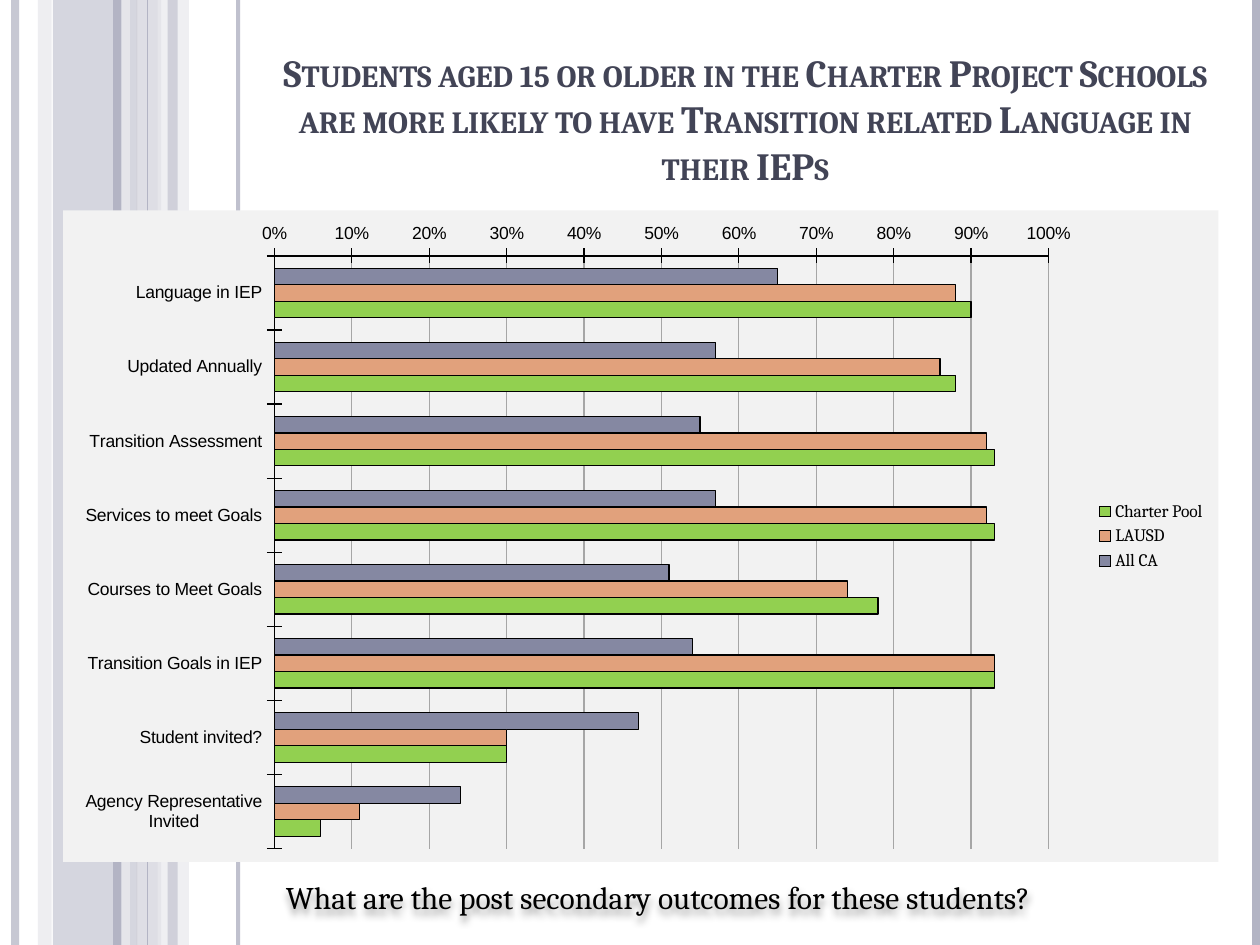
from typing import NamedTuple

from lxml.etree import SubElement
from pptx import Presentation
from pptx.chart.data import CategoryChartData
from pptx.dml.color import RGBColor
from pptx.enum.chart import XL_CHART_TYPE, XL_LEGEND_POSITION, XL_TICK_MARK
from pptx.enum.shapes import MSO_CONNECTOR, MSO_SHAPE
from pptx.enum.text import MSO_ANCHOR, MSO_AUTO_SIZE, PP_ALIGN
from pptx.oxml import parse_xml
from pptx.oxml.ns import nsdecls, qn
from pptx.util import Inches, Pt

COLORS = {
    "stripe": "B3B4C4", "pale": "D1D1DA", "faint": "E9E9ED",
    "title": "424456", "black": "000000", "panel": "F2F2F2", "grid": "A6A6A6",
    "All CA": "8588A2", "LAUSD": "E1A17C", "Charter Pool": "92D050",
}
HEIGHT = 7.5


class Band(NamedTuple):
    left: float
    width: float
    color: str
    alpha: int


class Stripe(NamedTuple):
    x: float
    weight: float
    color: str
    alpha: int = 100


BANDS = [
    Band(0.42, 0.67, "stripe", 54),
    Band(0.3, 0.11, "pale", 36),
    Band(1.08, 0.2, "pale", 70),
    Band(1.25, 0.25, "faint", 71),
]
STRIPES = [
    Stripe(0.12, 4.5, "stripe", 73),
    Stripe(1, 4.5, "faint", 83),
    Stripe(0.93, 4.5, "stripe"),
    Stripe(1.89, 2.25, "stripe", 82),
    Stripe(1.17, 0.75, "stripe"),
    Stripe(9.97, 4.5, "stripe"),
]
FRONT_BAND = Band(1.33, 0.08, "stripe", 51)

CATEGORIES = [
    "Language in IEP", "Updated Annually", "Transition Assessment",
    "Services to meet Goals", "Courses to Meet Goals",
    "Transition Goals in IEP", "Student invited?",
    "Agency Representative Invited",
]
SERIES = {
    "All CA": [0.65, 0.57, 0.55, 0.57, 0.51, 0.54, 0.47, 0.24],
    "LAUSD": [0.88, 0.86, 0.92, 0.92, 0.74, 0.93, 0.3, 0.11],
    "Charter Pool": [0.9, 0.88, 0.93, 0.93, 0.78, 0.93, 0.3, 0.06],
}


def rgb(name: str) -> RGBColor:
    return RGBColor.from_string(COLORS[name])


def set_alpha(element, percent: int) -> None:
    if percent < 100:
        clr = next(element.iter(qn("a:srgbClr")))
        SubElement(clr, qn("a:alpha"), val=str(percent * 1000))


def set_line(line, color: str, weight: float = 0.75) -> None:
    line.color.rgb = rgb(color)
    line.width = Pt(weight)


def draw_band(s, band: Band) -> None:
    sp = s.shapes.add_shape(MSO_SHAPE.RECTANGLE, Inches(band.left), 0,
                            Inches(band.width), Inches(HEIGHT))
    sp.shadow.inherit = False
    sp.fill.solid()
    sp.fill.fore_color.rgb = rgb(band.color)
    sp.line.fill.background()
    set_alpha(sp.element.spPr, band.alpha)


def draw_stripe(s, stripe: Stripe) -> None:
    x = Inches(stripe.x)
    cx = s.shapes.add_connector(MSO_CONNECTOR.STRAIGHT, x, 0, x, Inches(HEIGHT))
    set_line(cx.line, stripe.color, stripe.weight)
    set_alpha(cx.element.spPr, stripe.alpha)
    SubElement(cx.element.spPr, qn("a:effectLst"))


def write(tf, text: str, *, size: float, color: str, bold: bool = False,
          align=PP_ALIGN.LEFT, small_caps: bool = False) -> None:
    tf.word_wrap = True
    p = tf.paragraphs[0]
    p.alignment = align
    r = p.add_run()
    r.text = text
    r.font.name = "Cambria"
    r.font.size = Pt(size)
    r.font.bold = bold
    r.font.color.rgb = rgb(color)
    if small_caps:
        r.font._element.set("cap", "small")


def format_axis(axis) -> None:
    axis.major_tick_mark = XL_TICK_MARK.CROSS
    axis.minor_tick_mark = XL_TICK_MARK.NONE
    axis.tick_labels.font.name = "Arial"
    axis.tick_labels.font.size = Pt(10)
    set_line(axis.format.line, "black")


def draw_chart(s) -> None:
    data = CategoryChartData(number_format="0%")
    data.categories = CATEGORIES
    for name, values in SERIES.items():
        data.add_series(name, values)
    chart = s.shapes.add_chart(XL_CHART_TYPE.BAR_CLUSTERED, Inches(0.5), Inches(1.67),
                               Inches(9.17), Inches(5.17), data).chart
    chart.has_title = False
    chart.font.name = "Cambria"
    chart.font.size = Pt(10)
    chart.font.color.rgb = rgb("black")
    chart.has_legend = True
    chart.legend.position = XL_LEGEND_POSITION.RIGHT
    chart.legend.include_in_layout = False

    # Axes
    cat, val = chart.category_axis, chart.value_axis
    for axis in (cat, val):
        format_axis(axis)
    cat.reverse_order = True
    cat.has_major_gridlines = False
    val.minimum_scale, val.maximum_scale, val.major_unit = 0, 1, 0.1
    val.tick_labels.number_format = "0%"
    val.tick_labels.number_format_is_linked = False
    val.has_major_gridlines = True
    set_line(val.major_gridlines.format.line, "grid")

    # Bars
    plot = chart.plots[0]
    plot.vary_by_categories = False
    plot.gap_width, plot.overlap = 150, 0
    for series in plot.series:
        series.invert_if_negative = False
        series.format.fill.solid()
        series.format.fill.fore_color.rgb = rgb(series.name)
        set_line(series.format.line, "black")

    # Panel fill and plot position
    space = chart.element
    space.find(qn("c:chart")).addnext(parse_xml(
        f'<c:spPr {nsdecls("c", "a")}><a:solidFill><a:srgbClr val="{COLORS["panel"]}"/>'
        '</a:solidFill><a:ln><a:noFill/></a:ln></c:spPr>'))
    area = next(space.iter(qn("c:plotArea")))
    for old in area.findall(qn("c:layout")):
        area.remove(old)
    layout = parse_xml(f'<c:layout {nsdecls("c")}><c:manualLayout/></c:layout>')
    settings = {"layoutTarget": "inner", "xMode": "edge", "yMode": "edge",
                "x": 0.183, "y": 0.07, "w": 0.67, "h": 0.91}
    for tag, value in settings.items():
        SubElement(layout[0], qn(f"c:{tag}"), val=str(value))
    area.insert(0, layout)


def draw_title(s) -> None:
    title = s.shapes.title
    title.left, title.top = Inches(2), Inches(0.4)
    title.width, title.height = Inches(7.83), Inches(1.44)
    tf = title.text_frame
    tf.auto_size = MSO_AUTO_SIZE.NONE
    tf.vertical_anchor = MSO_ANCHOR.MIDDLE
    tf.margin_bottom = Inches(0.41)
    write(tf, "Students aged 15 or older in the Charter Project Schools are more "
          "likely to have Transition related Language in their IEPs",
          size=22, color="title", bold=True, align=PP_ALIGN.CENTER, small_caps=True)


def draw_question(s) -> None:
    tb = s.shapes.add_textbox(Inches(2.17), Inches(6.92), Inches(7.42), Inches(0.4))
    write(tb.text_frame, "What are the post secondary outcomes for these students?",
          size=18, color="black")
    tb.text_frame.auto_size = MSO_AUTO_SIZE.SHAPE_TO_FIT_TEXT
    # Soft shadow below the text
    tb.element.spPr.append(parse_xml(
        f'<a:effectLst {nsdecls("a")}><a:outerShdw blurRad="50800" dist="38100" '
        'dir="5400000" rotWithShape="0"><a:srgbClr val="000000">'
        '<a:alpha val="40000"/></a:srgbClr></a:outerShdw></a:effectLst>'))


def main() -> None:
    prs = Presentation()
    prs.slide_width, prs.slide_height = Inches(10), Inches(HEIGHT)
    s = prs.slides.add_slide(prs.slide_layouts[5])
    # Side decoration
    for band in BANDS:
        draw_band(s, band)
    for stripe in STRIPES:
        draw_stripe(s, stripe)
    draw_band(s, FRONT_BAND)
    # Content
    draw_chart(s)
    draw_title(s)
    draw_question(s)
    prs.save("out.pptx")


if __name__ == "__main__":
    main()
